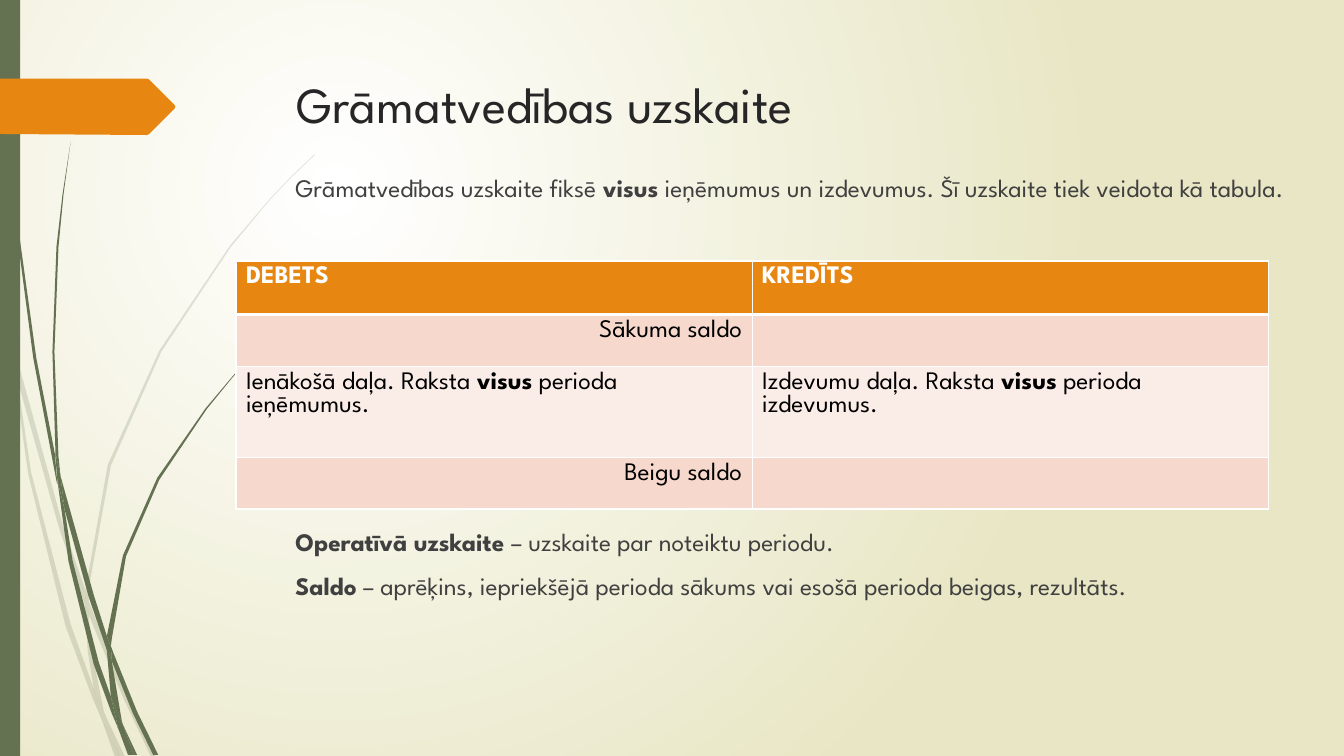
from lxml import etree
from pptx import Presentation, util as u
from pptx.dml.color import RGBColor
from pptx.enum import shapes, text
from pptx.oxml.ns import qn

WIDTH, HEIGHT = 13.33, 7.5
FONT = "League Spartan"
COLOURS = {
    "white": "FFFFFF", "cream": "E8E6C4", "moss": "647252", "orange": "E78712",
    "title": "262626", "body": "404040", "black": "000000",
    "band": "F6D9CC", "pale band": "FAEDE7",
}

# Corners of each outline as (column, row).
FAINT_GRASS = [
    [(.11, 3.5), (.09, 3.22), (0, 2.82), (0, 2.99), (.1, 3.44)],
    [(.58, 5.22), (.84, 5.99), (.85, 5.86), (.62, 5.2), (.14, 3.45), (.17, 3.76)],
    [(.92, 6.07), (.88, 5.96), (.88, 6.1), (1.23, 6.94), (1.5, 7.51), (1.55, 7.51), (1.27, 6.92)],
    [(1.19, 7.51), (1.24, 7.51), (1.05, 7.11)],
    [(.93, 6.83), (.7, 6.19), (.31, 4.69), (.17, 3.76), (.11, 3.5), (.28, 4.7), (.65, 6.21),
     (.92, 6.93), (1.01, 7.14), (.99, 7.07)],
    [(.84, 5.99), (.87, 6.46), (.93, 6.83), (.96, 6.92), (1.05, 7.11), (1.03, 7.06),
     (.91, 6.46), (.88, 6.1), (.88, 6.08)],
    [(.88, 5.84), (1.1, 4.62), (1.6, 3.49), (2.29, 2.45), (2.68, 1.98), (2.9, 1.75), (3.12, 1.54),
     (3.12, 1.53), (2.89, 1.75), (2.68, 1.97), (2.28, 2.44), (1.58, 3.48), (1.07, 4.61),
     (.85, 5.84), (.85, 5.86), (.88, 5.96)],
    [(1.01, 7.14), (1.14, 7.51), (1.19, 7.51)],
    [(.88, 6.08), (.88, 6.1), (.88, 5.96), (.85, 5.86), (.84, 5.99)],
    [(.96, 6.92), (.93, 6.83), (.99, 7.07), (1.01, 7.14), (1.19, 7.51), (1.05, 7.11)],
]
DARK_GRASS = [
    [(.07, 1.1), (.17, 2.33), (.33, 3.55), (.56, 4.77), (.57, 4.81), (.55, 4.57), (.55, 4.53),
     (.36, 3.55), (.19, 2.32), (.08, 1.09), (.05, .48), (.04, 0), (.03, 0), (.04, .48)],
    [(.88, 5.92), (1.06, 6.45), (1.06, 6.33), (1.06, 6.31), (.93, 5.9), (.6, 4.72), (.64, 5.05)],
    [(1.13, 6.49), (1.1, 6.41), (1.11, 6.56), (1.32, 7.08), (1.52, 7.49), (1.57, 7.49),
     (1.36, 7.06)],
    [(1.1, 6.91), (.98, 6.57), (.72, 5.56), (.64, 5.05), (.57, 4.77), (.68, 5.57), (.93, 6.59),
     (1.11, 7.08), (1.17, 7.22), (1.16, 7.17)],
    [(.6, 4.72), (.58, 4.53), (.54, 3.49), (.58, 2.45), (.63, 1.93), (.7, 1.41), (.62, 1.93),
     (.56, 2.45), (.52, 3.49), (.55, 4.49)],
    [(1.33, 7.49), (1.36, 7.49), (1.22, 7.19)],
    [(.57, 4.77), (.64, 5.05), (.6, 4.72), (.55, 4.49), (.55, 4.53)],
    [(1.11, 6.33), (1.25, 5.52), (1.58, 4.76), (2.05, 4.06), (2.31, 3.74), (2.45, 3.59),
     (2.61, 3.44), (2.6, 3.44), (2.45, 3.58), (2.31, 3.73), (2.04, 4.05), (1.56, 4.74),
     (1.22, 5.51), (1.06, 6.31), (1.1, 6.41)],
    [(1.17, 7.22), (1.27, 7.49), (1.31, 7.49)],
    [(1.06, 6.45), (1.1, 6.91), (1.16, 7.06), (1.22, 7.19), (1.21, 7.16), (1.11, 6.56),
     (1.09, 6.51)],
    [(1.06, 6.45), (1.09, 6.51), (1.11, 6.56), (1.1, 6.41), (1.06, 6.31), (1.06, 6.33)],
    [(1.16, 7.06), (1.1, 6.91), (1.16, 7.17), (1.17, 7.22), (1.3, 7.49), (1.33, 7.49),
     (1.22, 7.19)],
]
MARKER = [(0, .78), (1.46, .78), (1.48, .79), (1.73, 1.04), (1.74, 1.06), (1.73, 1.08),
          (1.48, 1.33), (1.46, 1.34), (0, 1.33)]


def rgb(name):
    return RGBColor.from_string(COLOURS[name])


def write(paragraph, wording, size=18, colour="body", align=text.PP_ALIGN.LEFT, before=0, bold=False):
    """Fill a paragraph; parts between asterisks switch the weight."""
    paragraph.alignment = align
    paragraph.space_before = u.Pt(before)
    for part, words in enumerate(wording.split("*")):
        if words:
            run = paragraph.add_run()
            run.text = words
            run.font.name, run.font.size = FONT, u.Pt(size)
            run.font.bold = bold or part % 2 == 1
            run.font.color.rgb = rgb(colour)


class Page:
    """One slide on a grid of one-inch columns and rows."""

    def __init__(self, deck):
        deck.slide_width, deck.slide_height = self.cells(WIDTH, HEIGHT)
        self.slide = deck.slides.add_slide(deck.slide_layouts[1])
        self.shapes = self.slide.shapes

    def cells(self, *counts):
        return [u.Inches(count) for count in counts]

    def backdrop(self):
        fill = self.slide.background.fill
        fill.gradient()
        for stop, name in zip(fill.gradient_stops, ("white", "cream")):
            stop.color.rgb = rgb(name)
        gradient = self.slide.background._cSld.find(".//" + qn("a:gradFill"))
        gradient.remove(gradient.find(qn("a:lin")))
        glow = etree.SubElement(gradient, qn("a:path"), path="circle")
        etree.SubElement(glow, qn("a:fillToRect"), l="50000", t="50000", r="100000", b="100000")

    def paint(self, shape, colour, opacity=100):
        shape.shadow.inherit = False
        shape.fill.solid()
        shape.fill.fore_color.rgb = rgb(colour)
        shape.line.fill.background()
        if opacity < 100:
            tone = shape._element.spPr.find(".//" + qn("a:srgbClr"))
            etree.SubElement(tone, qn("a:alpha"), val=str(opacity * 1000))

    def outline(self, corners, colour, opacity=100):
        start, *others = [self.cells(*corner) for corner in corners]
        builder = self.shapes.build_freeform(*start, scale=1.0)
        builder.add_line_segments(others, close=True)
        self.paint(builder.convert_to_shape(), colour, opacity)

    def bar(self, box, colour):
        self.paint(self.shapes.add_shape(shapes.MSO_SHAPE.RECTANGLE, *self.cells(*box)), colour)

    def placeholder(self, index, box, lines):
        """Place a placeholder in front and fill it with (wording, format) lines."""
        holder = self.slide.placeholders[index]
        self.shapes._spTree.append(holder._element)
        holder.left, holder.top, holder.width, holder.height = self.cells(*box)
        frame = holder.text_frame
        frame.word_wrap, frame.auto_size = True, text.MSO_AUTO_SIZE.NONE
        frame.vertical_anchor = text.MSO_ANCHOR.TOP
        for number, (wording, style) in enumerate(lines):
            paragraph = frame.add_paragraph() if number else frame.paragraphs[0]
            write(paragraph, wording, **style)
            properties = paragraph._p.get_or_add_pPr()
            properties.set("marL", "0")
            properties.set("indent", "0")
            etree.SubElement(properties, qn("a:buNone"))

    def border(self, cell, bottom):
        properties = cell._tc.get_or_add_tcPr()
        for place, (side, width) in enumerate({"L": 1, "R": 1, "T": 1, "B": bottom}.items()):
            line = etree.Element(qn("a:ln" + side), w=str(u.Pt(width)))
            tone = etree.SubElement(line, qn("a:solidFill"))
            etree.SubElement(tone, qn("a:srgbClr"), val=COLOURS["white"])
            properties.insert(place, line)

    def table(self, box, heights, rows):
        grid = self.shapes.add_table(len(rows), len(rows[0][0]), *self.cells(*box)).table
        for number, (height, (wordings, colour, style)) in enumerate(zip(heights, rows)):
            grid.rows[number].height = u.Inches(height)
            for cell, wording in zip(grid.rows[number].cells, wordings):
                cell.fill.solid()
                cell.fill.fore_color.rgb = rgb(colour)
                self.border(cell, bottom=1 if number else 3)
                write(cell.text_frame.paragraphs[0], wording, **style)


def main():
    deck = Presentation()
    page = Page(deck)
    page.backdrop()
    for grass, opacity in ((FAINT_GRASS, 20), (DARK_GRASS, 100)):
        for blade in grass:
            page.outline(blade, "moss", opacity)
    page.bar((0, 0, .2, HEIGHT), "moss")
    page.outline(MARKER, "orange")

    page.placeholder(0, (2.84, .68, 9.75, 1.4), [
        ("Grāmatvedības uzskaite", {"size": 36, "colour": "title"})])
    page.placeholder(1, (2.83, 1.66, 10.25, 4.81), [
        ("Grāmatvedības uzskaite fiksē *visus* ieņēmumus un izdevumus. "
         "Šī uzskaite tiek veidota kā tabula.", {}),
        ("*Operatīvā uzskaite *– uzskaite par noteiktu periodu.", {"before": 231}),
        ("*Saldo* – aprēķins, iepriekšējā perioda sākums vai esošā perioda beigas, rezultāts.",
         {"before": 10})])

    heading = {"colour": "white", "bold": True}
    entry = {"colour": "black"}
    balance = {"colour": "black", "align": text.PP_ALIGN.RIGHT}
    page.table((2.34, 2.59, 10.24, 2.46), (.53, .52, .9, .51), [
        (("DEBETS", "KREDĪTS"), "orange", heading),
        (("Sākuma saldo", ""), "band", balance),
        (("Ienākošā daļa. Raksta *visus* perioda ieņēmumus.",
          "Izdevumu daļa. Raksta *visus* perioda izdevumus."), "pale band", entry),
        (("Beigu saldo", ""), "band", balance)])
    deck.save("out.pptx")


if __name__ == "__main__":
    main()
